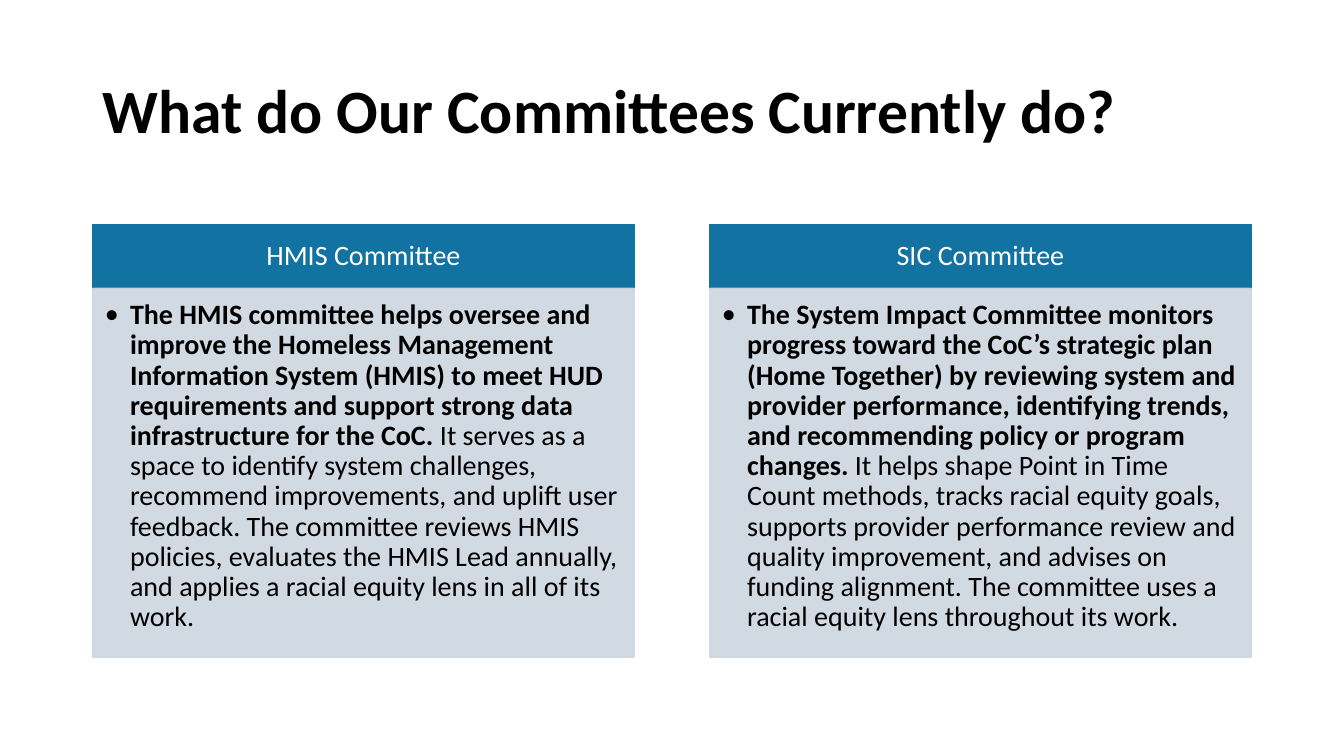
import pptx
import pptx.dml.color
import pptx.enum.shapes
import pptx.enum.text
import pptx.oxml.ns
import pptx.util
from lxml import etree

Inches = pptx.util.Inches
Pt = pptx.util.Pt
ALIGN = pptx.enum.text.PP_ALIGN
ANCHOR = pptx.enum.text.MSO_ANCHOR
qn = pptx.oxml.ns.qn

FONT = "Calibri"
MARGIN, COLUMN, GUTTER = 0.92, 5.37, 0.75
HEADER_ROW = (2.23, 0.63)
BODY_ROW = (2.86, 3.66)

HEADER_FRAME = {
    "vertical_anchor": ANCHOR.MIDDLE,
    "margin_left": Inches(0.16), "margin_top": Inches(0.09),
    "margin_right": Inches(0.16), "margin_bottom": Inches(0.09),
}
BODY_FRAME = {
    "vertical_anchor": ANCHOR.TOP,
    "margin_left": Inches(0.12), "margin_top": Inches(0.12),
    "margin_right": Inches(0.13), "margin_bottom": Inches(0.17),
}
TITLE_FRAME = {
    "vertical_anchor": ANCHOR.MIDDLE,
    "auto_size": pptx.enum.text.MSO_AUTO_SIZE.NONE,
}
TITLE_PARAGRAPH = {"alignment": ALIGN.LEFT, "line_spacing": 0.9}
HEADER_PARAGRAPH = {"alignment": ALIGN.CENTER, "line_spacing": 0.9, "space_after": Pt(7)}
BODY_PARAGRAPH = {"alignment": ALIGN.LEFT, "line_spacing": 0.9, "space_after": Pt(3), "level": 1}

COMMITTEES = [
    (
        "HMIS Committee",
        "The HMIS committee helps oversee and improve the Homeless Management Information "
        "System (HMIS) to meet HUD requirements and support strong data infrastructure for the CoC.",
        " It serves as a space to identify system challenges, recommend improvements, and uplift "
        "user feedback. The committee reviews HMIS policies, evaluates the HMIS Lead annually, "
        "and applies a racial equity lens in all of its work.",
    ),
    (
        "SIC Committee",
        "The System Impact Committee monitors progress toward the CoC’s strategic plan (Home "
        "Together) by reviewing system and provider performance, identifying trends, and "
        "recommending policy or program changes.",
        " It helps shape Point in Time Count methods, tracks racial equity goals, supports "
        "provider performance review and quality improvement, and advises on funding alignment. "
        "The committee uses a racial equity lens throughout its work.",
    ),
]


def apply(target, values):
    for name, value in values.items():
        setattr(target, name, value)


def paint(color_format, color):
    color_format.rgb = pptx.dml.color.RGBColor.from_string(color)


def write(paragraph, text, size, color, bold=False):
    run = paragraph.add_run()
    run.text = text
    apply(run.font, {"name": FONT, "size": Pt(size), "bold": bold})
    paint(run.font.color, color)


def add_bullet(paragraph):
    properties = paragraph._p.get_or_add_pPr()
    properties.set("marL", str(Inches(0.25)))
    properties.set("indent", str(Inches(-0.25)))
    etree.SubElement(properties, qn("a:buFont")).set("typeface", FONT)
    etree.SubElement(properties, qn("a:buChar")).set("char", "•")


def add_panel(slide, column, row, color, frame_format, paragraph_format, opacity=100):
    left = MARGIN + column * (COLUMN + GUTTER)
    top, height = row
    panel = slide.shapes.add_shape(
        pptx.enum.shapes.MSO_SHAPE.RECTANGLE,
        Inches(left), Inches(top), Inches(COLUMN), Inches(height),
    )
    panel.shadow.inherit = False
    panel.line.width = Pt(1)
    for fill in (panel.fill, panel.line.fill):
        fill.solid()
        paint(fill.fore_color, color)
    if opacity < 100:
        for tint in panel._element.spPr.iter(qn("a:srgbClr")):
            etree.SubElement(tint, qn("a:alpha")).set("val", str(opacity * 1000))
    panel.text_frame.word_wrap = True
    apply(panel.text_frame, frame_format)
    paragraph = panel.text_frame.paragraphs[0]
    apply(paragraph, paragraph_format)
    return paragraph


def add_title(slide, text):
    title = slide.shapes.title
    apply(title, {"left": Inches(MARGIN), "top": Inches(0.4),
                  "width": Inches(11.5), "height": Inches(1.45)})
    apply(title.text_frame, TITLE_FRAME)
    paragraph = title.text_frame.paragraphs[0]
    apply(paragraph, TITLE_PARAGRAPH)
    write(paragraph, text, 44, "000000", bold=True)


def add_committee(slide, column, name, purpose, details):
    header = add_panel(slide, column, HEADER_ROW, "1272A2", HEADER_FRAME, HEADER_PARAGRAPH)
    write(header, name, 20, "FFFFFF")
    body = add_panel(slide, column, BODY_ROW, "CCD5E0", BODY_FRAME, BODY_PARAGRAPH, opacity=90)
    add_bullet(body)
    write(body, purpose, 20, "000000", bold=True)
    write(body, details, 20, "000000")


def main():
    deck = pptx.Presentation()
    apply(deck, {"slide_width": Inches(13.33), "slide_height": Inches(7.5)})
    slide = deck.slides.add_slide(deck.slide_layouts[5])
    add_title(slide, "What do Our Committees Currently do?")
    for column, committee in enumerate(COMMITTEES):
        add_committee(slide, column, *committee)
    deck.save("out.pptx")


if __name__ == "__main__":
    main()
